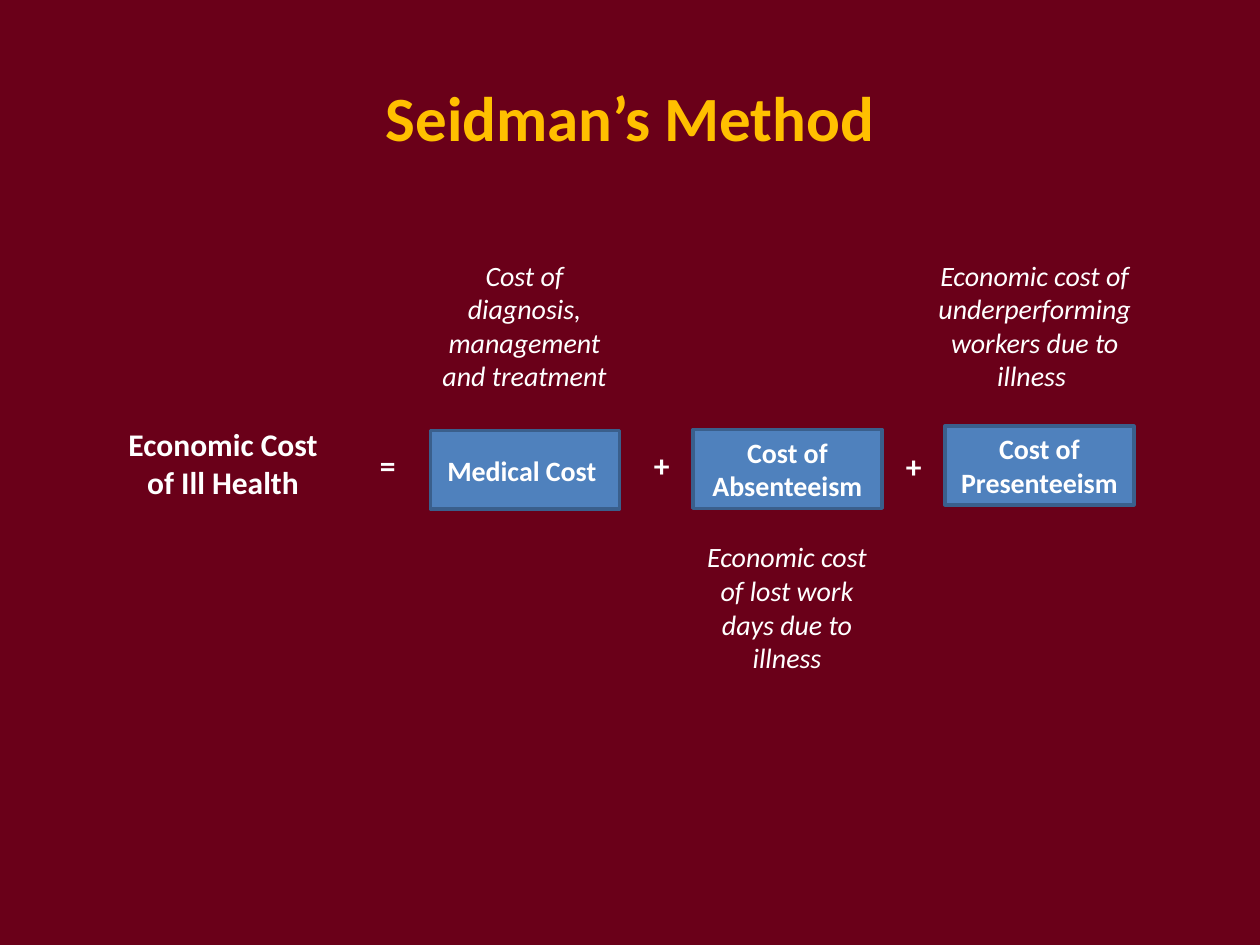
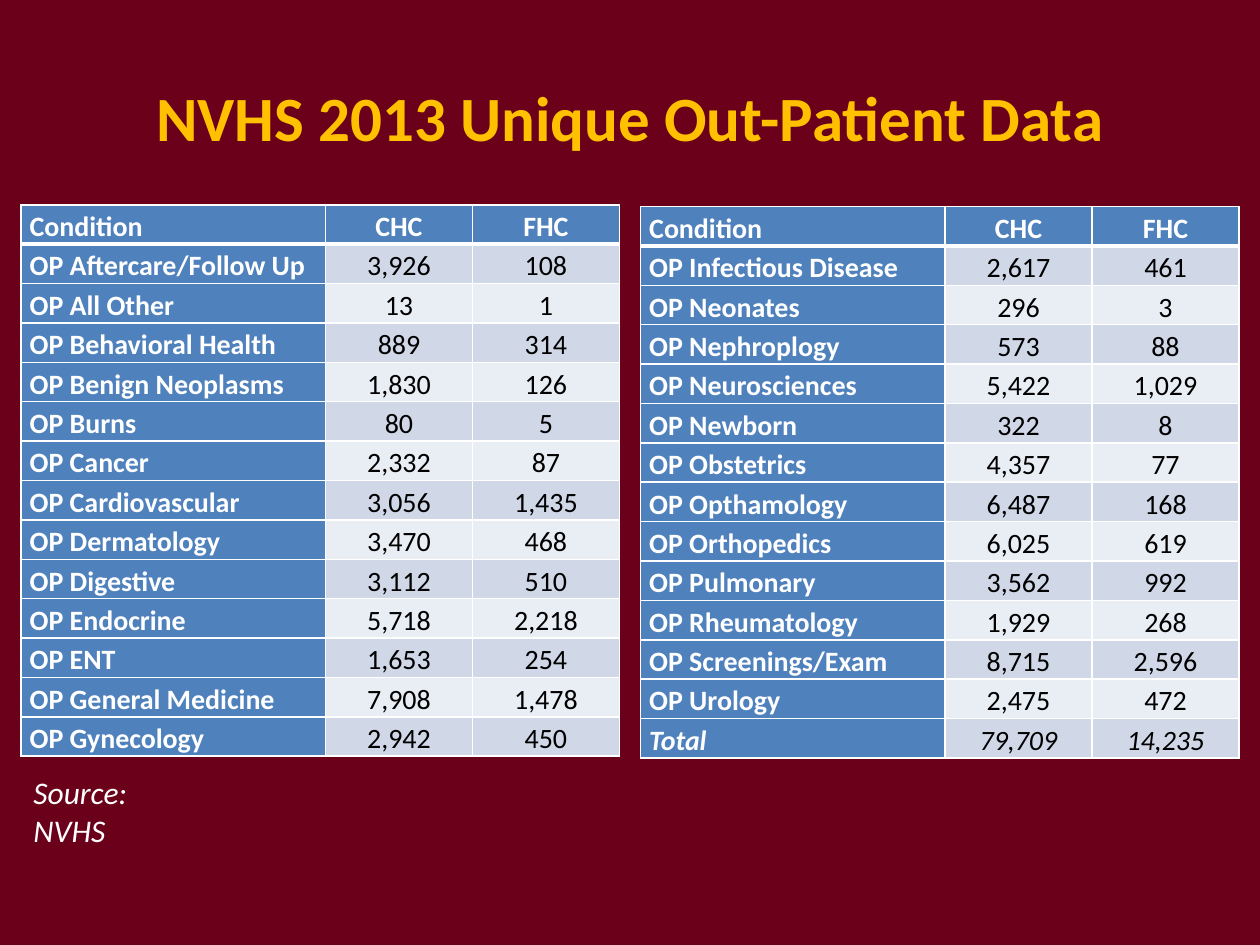
from lxml import etree
from pptx import Presentation
from pptx.dml.color import RGBColor
from pptx.enum.shapes import MSO_SHAPE
from pptx.enum.text import MSO_ANCHOR, MSO_AUTO_SIZE, PP_ALIGN
from pptx.oxml.ns import qn
from pptx.util import Pt

RECTANGLE = MSO_SHAPE.RECTANGLE
MIDDLE = MSO_ANCHOR.MIDDLE
GROW = MSO_AUTO_SIZE.SHAPE_TO_FIT_TEXT
LEFT, CENTER, JUSTIFY = PP_ALIGN.LEFT, PP_ALIGN.CENTER, PP_ALIGN.JUSTIFY

FONT = "Calibri"
COLORS = {
    "background": "6A0019",
    "title": "FFC000",
    "light": "FFFFFF",
    "dark": "000000",
    "accent": "4F81BD",
    "outline": "3A5F8C",
    "odd_row": "D0D8E8",
    "even_row": "E9EDF4",
}


def color(name):
    return RGBColor.from_string(COLORS[name])


def write(frame, text, size=16, ink="light", bold=False, italic=False,
          align=CENTER, spacing=None):
    """Fill a text frame, one paragraph for each line of the text."""
    for number, line in enumerate(text.split("\n")):
        para = frame.add_paragraph() if number else frame.paragraphs[0]
        para.alignment = align
        if spacing:
            para.line_spacing = spacing
        span = para.add_run()
        span.text = line
        span.font.name = FONT
        span.font.size = Pt(size)
        span.font.bold = bold
        span.font.italic = italic
        span.font.color.rgb = color(ink)


def set_borders(cell, widths):
    """Draw the cell's edges; widths maps an edge (L, R, T, B) to points."""
    properties = cell._tc.get_or_add_tcPr()
    for edge, width in widths.items():
        line = etree.SubElement(properties, qn(f"a:ln{edge}"), w=str(Pt(width)))
        fill = etree.SubElement(line, qn("a:solidFill"))
        etree.SubElement(fill, qn("a:srgbClr"), val=COLORS["light"])


class Deck:
    def __init__(self):
        self.file = Presentation()
        self.file.slide_width, self.file.slide_height = Pt(720), Pt(540)
        background = self.file.slide_master.background.fill
        background.solid()
        background.fore_color.rgb = color("background")
        self.page = None

    def new_page(self, title):
        self.page = self.file.slides.add_slide(self.file.slide_layouts[5])
        box = self.page.shapes.title
        box.left, box.top, box.width, box.height = Pt(36), Pt(21.6), Pt(648), Pt(90)
        box.text_frame.vertical_anchor = MIDDLE
        write(box.text_frame, title, size=36, ink="title", bold=True)

    def text(self, text, left, top, width, height, wrap=False, **style):
        box = self.page.shapes.add_textbox(Pt(left), Pt(top), Pt(width), Pt(height))
        box.text_frame.word_wrap = wrap
        box.text_frame.auto_size = GROW
        write(box.text_frame, text, **style)

    def block(self, text, left, top, width, height):
        box = self.page.shapes.add_shape(
            RECTANGLE, Pt(left), Pt(top), Pt(width), Pt(height))
        box.shadow.inherit = False
        box.fill.solid()
        box.fill.fore_color.rgb = color("accent")
        box.line.color.rgb = color("outline")
        box.line.width = Pt(2)
        box.text_frame.word_wrap = True
        box.text_frame.vertical_anchor = MIDDLE
        write(box.text_frame, text, bold=True)

    def table(self, rows, left, top, widths, row_height):
        table = self.page.shapes.add_table(
            len(rows), len(widths), Pt(left), Pt(top),
            Pt(sum(widths)), Pt(row_height * len(rows))).table
        table.first_row = table.horz_banding = False
        for column, width in zip(table.columns, widths):
            column.width = Pt(width)
        for r, values in enumerate(rows):
            table.rows[r].height = Pt(row_height)
            for c, value in enumerate(values):
                cell = table.cell(r, c)
                heading = r == 0 or c == 0
                stripe = "odd_row" if r % 2 else "even_row"
                # A thick rule parts the header from the body
                set_borders(cell, {"L": 1, "R": 1, "T": 3 if r == 1 else 1,
                                   "B": 3 if r == 0 else 1})
                cell.fill.solid()
                cell.fill.fore_color.rgb = color("accent" if heading else stripe)
                cell.margin_left = cell.margin_right = Pt(5)
                cell.margin_top = cell.margin_bottom = 0
                write(cell.text_frame, value, bold=heading,
                      ink="light" if heading else "dark",
                      italic=values[0] == "Total", spacing=1.15,
                      align=CENTER if c else JUSTIFY)


# Cost equation: text, left, top
TERMS = [
    ("Medical Cost ", 246, 246),
    ("Cost of Absenteeism", 396, 245.5),
    ("Cost of Presenteeism", 540, 243.5),
]
SIGNS = [("=", 210, 251.5), ("+", 366.5, 251.5), ("+", 510.5, 252)]
# Explanations: text, left, top, width
NOTES = [
    ("Cost of diagnosis, management and treatment", 240, 144, 119.5),
    ("Economic cost of lost work days due to illness", 390, 305, 119.5),
    ("Economic cost of underperforming workers due to illness ", 522.5, 144, 137.5),
]

HEADER = ("Condition", "CHC", "FHC")
FIRST_HALF = [
    HEADER,
    ("OP Aftercare/Follow Up", "3,926", "108"),
    ("OP All Other", "13", "1"),
    ("OP Behavioral Health", "889", "314"),
    ("OP Benign Neoplasms", "1,830", "126"),
    ("OP Burns", "80", "5"),
    ("OP Cancer", "2,332", "87"),
    ("OP Cardiovascular", "3,056", "1,435"),
    ("OP Dermatology", "3,470", "468"),
    ("OP Digestive", "3,112", "510"),
    ("OP Endocrine", "5,718", "2,218"),
    ("OP ENT", "1,653", "254"),
    ("OP General Medicine", "7,908", "1,478"),
    ("OP Gynecology", "2,942", "450"),
]
SECOND_HALF = [
    HEADER,
    ("OP Infectious Disease", "2,617", "461"),
    ("OP Neonates", "296", "3"),
    ("OP Nephroplogy", "573", "88"),
    ("OP Neurosciences", "5,422", "1,029"),
    ("OP Newborn", "322", "8"),
    ("OP Obstetrics", "4,357", "77"),
    ("OP Opthamology", "6,487", "168"),
    ("OP Orthopedics", "6,025", "619"),
    ("OP Pulmonary", "3,562", "992"),
    ("OP Rheumatology", "1,929", "268"),
    ("OP Screenings/Exam", "8,715", "2,596"),
    ("OP Urology", "2,475", "472"),
    ("Total", "79,709", "14,235"),
]


def build_method(deck):
    deck.new_page("Seidman’s Method")
    deck.text("Economic Cost\nof Ill Health", 65.5, 239.5, 124, 51, size=18, bold=True)
    for text, left, top in TERMS:
        deck.block(text, left, top, 108, 45)
    for text, left, top in SIGNS:
        deck.text(text, left, top, 24, 29, size=18, bold=True, align=LEFT)
    for text, left, top, width in NOTES:
        deck.text(text, left, top, width, 85, wrap=True, italic=True)


def build_patient_data(deck):
    deck.new_page("NVHS 2013 Unique Out-Patient Data")
    widths = (174, 84, 84)
    deck.table(FIRST_HALF, 12, 117, widths, 22)
    deck.table(SECOND_HALF, 366, 118, widths, 22)
    deck.text("Source: NVHS", 12, 438, 112, 29, size=18, italic=True, align=LEFT)


def main():
    deck = Deck()
    build_method(deck)
    build_patient_data(deck)
    deck.file.save("out.pptx")


if __name__ == "__main__":
    main()
